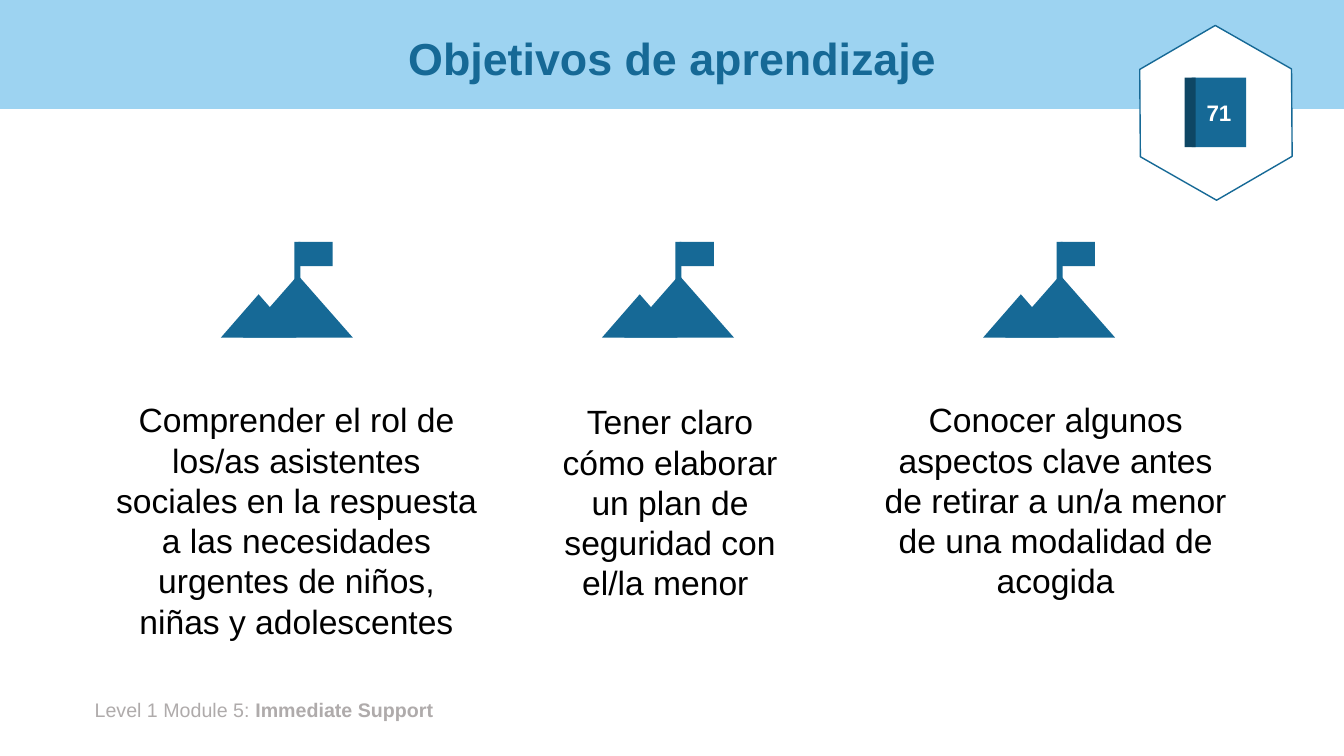
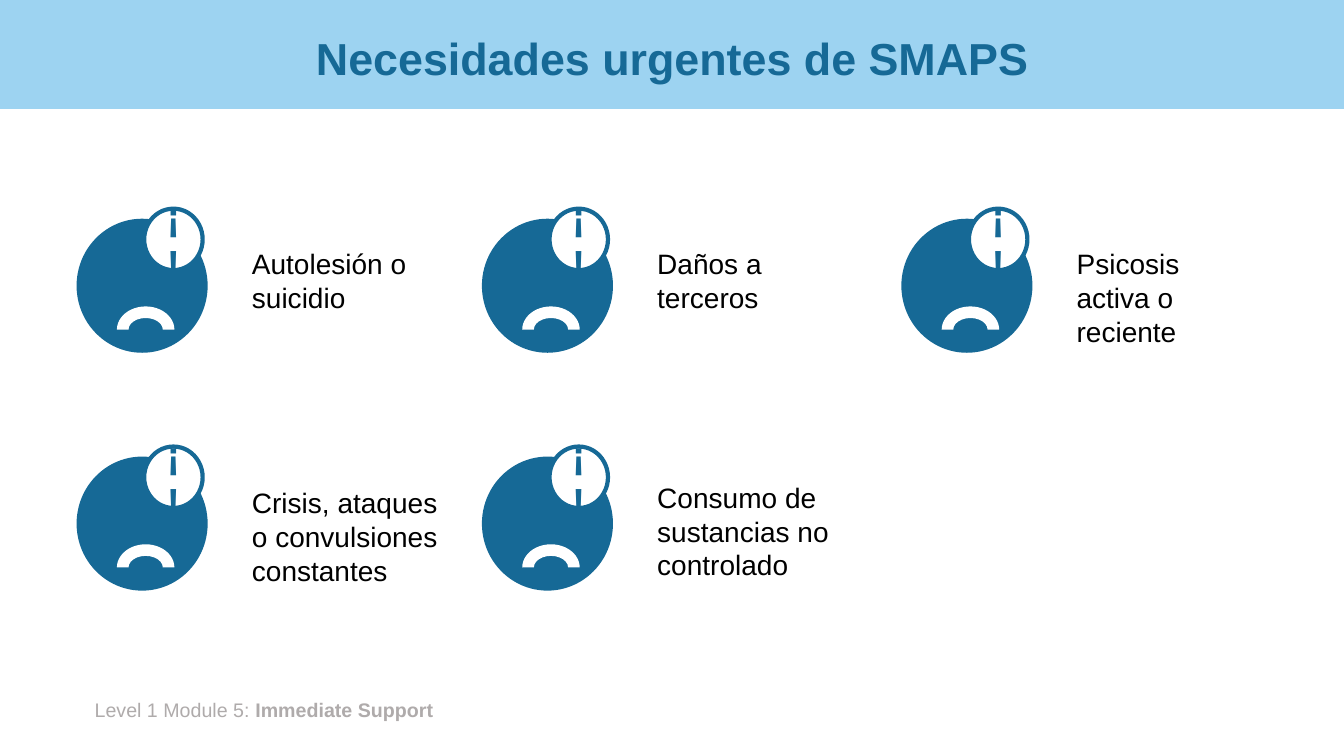
from pptx import Presentation
from pptx.dml.color import RGBColor
from pptx.enum.shapes import MSO_SHAPE as SHAPE
from pptx.enum.text import MSO_ANCHOR, PP_ALIGN
from pptx.util import Emu, Pt

PX = 9144  # 100 px to the inch
WIDE, HIGH = 1333, 750
FONT = "Arial"
BLUE, NAVY, SKY = "166996", "0E4664", "9DD3F1"
WHITE, BLACK, GREY = "FFFFFF", "000000", "AFABAB"


def px(*nums):
    return [Emu(n * PX) for n in nums]


def rgb(code):
    return RGBColor.from_string(code)


def style(run, size, color, bold):
    font = run.font
    font.name, font.size, font.bold = FONT, Pt(size), bold
    font.color.rgb = rgb(color)


def write(shape, text, size, color=BLACK, bold=False, align=PP_ALIGN.LEFT,
          anchor=MSO_ANCHOR.TOP):
    """Fill a shape with one paragraph and return that paragraph."""
    frame = shape.text_frame
    frame.word_wrap = True
    frame.vertical_anchor = anchor
    frame.text = text
    para = frame.paragraphs[0]
    para.alignment = align
    style(para.runs[0], size, color, bold)
    return para


def label(shapes, box, text, size, **look):
    return write(shapes.add_textbox(*px(*box)), text, size, **look)


def draw(shapes, kind, box, fill, line=None, weight=1):
    shape = shapes.add_shape(kind, *px(*box))
    shape.shadow.inherit = False
    shape.fill.solid()
    shape.fill.fore_color.rgb = rgb(fill)
    if line:
        shape.line.color.rgb = rgb(line)
        shape.line.width = Pt(weight)
    else:
        shape.line.fill.background()
    return shape


def page(deck, title):
    """Add a slide with the band, footer and title; return its shapes."""
    shapes = deck.slides.add_slide(deck.slide_layouts[6]).shapes
    draw(shapes, SHAPE.RECTANGLE, (0, 0, WIDE, 108), SKY)
    foot = label(shapes, (84, 687, 455, 34), "Level 1 Module 5: ", 14,
                 color=GREY)
    run = foot.add_run()
    run.text = "Immediate Support"
    style(run, 14, GREY, True)
    head = label(shapes, (92, 13, 1150, 95), title, 32, color=BLUE, bold=True,
                 align=PP_ALIGN.CENTER, anchor=MSO_ANCHOR.MIDDLE)
    head.line_spacing = 0.9
    return shapes


def peak(shapes, x, y):
    """Draw two mountains with a flag on the higher one."""
    group = shapes.add_group_shape().shapes
    for kind, dx, dy, w, h in (
            (SHAPE.RECTANGLE, 73, 0, 6, 40),
            (SHAPE.RECTANGLE, 77, 0, 34, 24),
            (SHAPE.ISOSCELES_TRIANGLE, 22, 33, 109, 62),
            (SHAPE.ISOSCELES_TRIANGLE, 0, 52, 75, 43)):
        draw(group, kind, (x + dx, y + dy, w, h), BLUE)


def badge(shapes, x, y, number):
    """Draw a book with a page number inside a hexagon."""
    group = shapes.add_group_shape().shapes
    hexagon = draw(group, SHAPE.HEXAGON, (x, y, 174, 150), WHITE, BLUE)
    hexagon.adjustments[0] = 0.29
    hexagon.rotation = 29.7
    book = draw(group, SHAPE.RECTANGLE, (x + 63, y + 40, 54, 69), BLUE)
    write(book, number, 16, WHITE, True, PP_ALIGN.CENTER, MSO_ANCHOR.MIDDLE)
    draw(group, SHAPE.RECTANGLE, (x + 56, y + 40, 11, 69), NAVY)


def face(shapes, x, y):
    """Draw a sad head with an alert bubble."""
    group = shapes.add_group_shape().shapes
    draw(group, SHAPE.OVAL, (x, y + 10, 130, 133), BLUE)
    draw(group, SHAPE.BLOCK_ARC, (x + 40, y + 97, 57, 46), WHITE)
    alert = draw(group, SHAPE.OVAL, (x + 67, y, 58, 61), WHITE, BLUE, 3)
    write(alert, "¡!", 28, BLUE, True, PP_ALIGN.CENTER, MSO_ANCHOR.MIDDLE)


def goals(deck):
    shapes = page(deck, "Objetivos de aprendizaje")
    items = (
        ((105, 391, 378, 252), "Comprender el rol de los/as asistentes "
         "sociales en la respuesta a las necesidades urgentes de niños, "
         "niñas y adolescentes"),
        ((537, 393, 255, 212), "Tener claro cómo elaborar un plan de "
         "seguridad con el/la menor "),
        ((864, 391, 366, 212), "Conocer algunos aspectos clave antes de "
         "retirar a un/a menor de una modalidad de acogida"))
    for col, (box, text) in enumerate(items):
        peak(shapes, 219 + 378 * col, 240)
        label(shapes, box, text, 24, align=PP_ALIGN.CENTER)
    badge(shapes, 1119, 37, "71")


def needs(deck):
    shapes = page(deck, "Necesidades urgentes de SMAPS")
    cols, rows = (76, 478, 894), (207, 443)
    items = (
        ("Autolesión o suicidio", 33, 225),
        ("Daños a terceros", 33, 225),
        ("Psicosis activa o reciente", 33, 186),
        ("Crisis, ataques o convulsiones constantes", 34, 225),
        ("Consumo de sustancias no controlado", 29, 225))
    for i, (text, drop, width) in enumerate(items):
        x, y = cols[i % 3], rows[i // 3]
        face(shapes, x, y)
        label(shapes, (x + 164, y + drop, width, 111), text, 20)


def main():
    deck = Presentation()
    deck.slide_width, deck.slide_height = px(WIDE, HIGH)
    goals(deck)
    needs(deck)
    deck.save("out.pptx")


if __name__ == "__main__":
    main()
